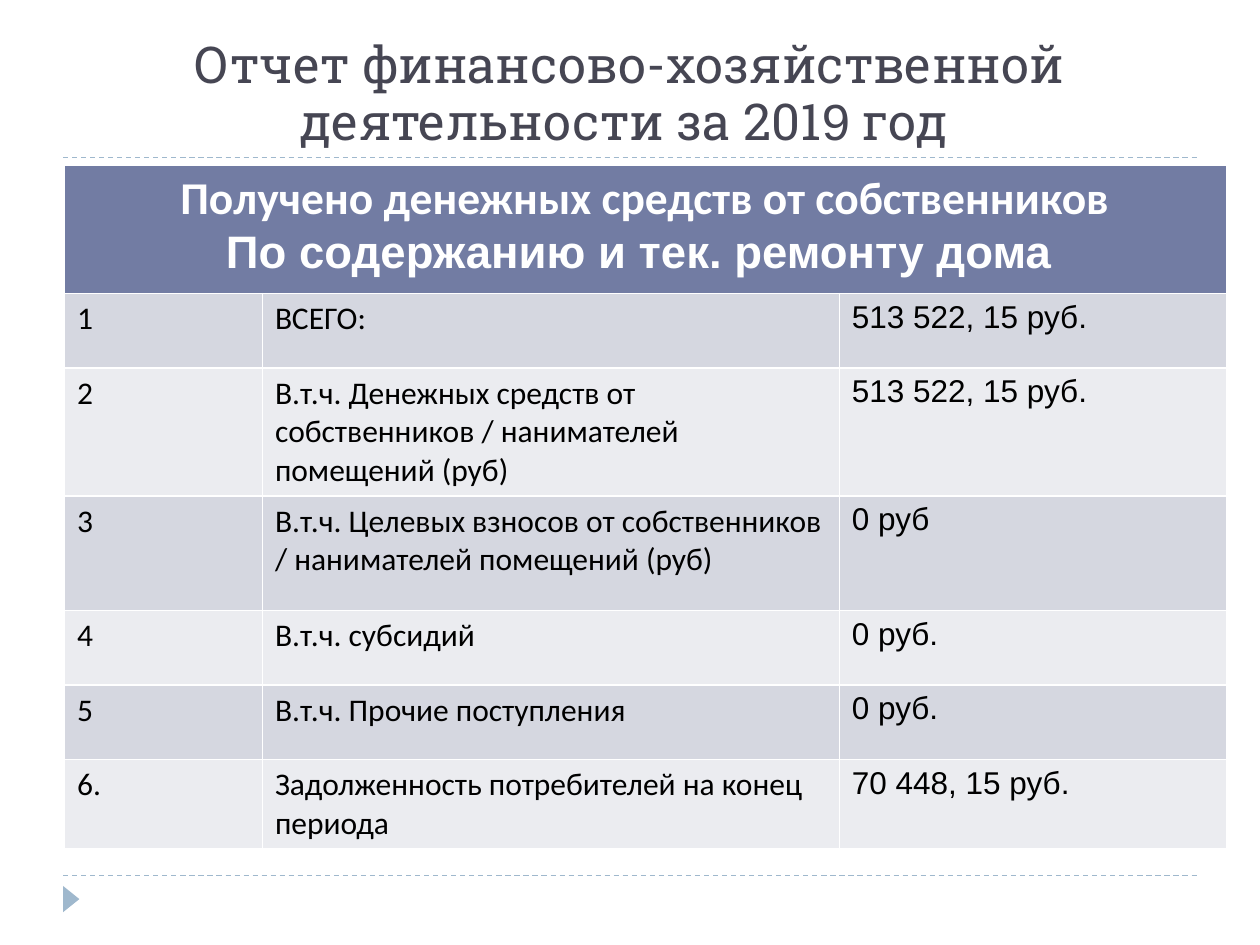
"""Build the 2019 financial report slide with a table of funds received."""
from lxml.etree import SubElement
from pptx import Presentation
from pptx.dml.color import RGBColor
from pptx.enum.dml import MSO_LINE
from pptx.enum.shapes import MSO_CONNECTOR, MSO_SHAPE
from pptx.enum.text import MSO_ANCHOR, MSO_AUTO_SIZE, PP_ALIGN
from pptx.oxml.ns import qn
from pptx.util import Cm, Pt

ACCENT = RGBColor(0x9F, 0xB8, 0xCD)
TITLE = RGBColor(0x46, 0x46, 0x53)
HEADER = RGBColor(0x72, 0x7C, 0xA3)
BANDS = [RGBColor(0xD5, 0xD7, 0xE0), RGBColor(0xEB, 0xEC, 0xF0)]
WHITE = RGBColor(0xFF, 0xFF, 0xFF)
BLACK = RGBColor(0, 0, 0)

HEADINGS = [
    ("Получено денежных средств от собственников", "Calibri"),
    ("По содержанию и тек. ремонту дома ", "Arial"),
]
ROWS = [
    ("1", "ВСЕГО:", "513 522, 15 руб."),
    ("2", "В.т.ч. Денежных средств от собственников / нанимателей помещений (руб)", "513 522, 15 руб."),
    ("3", "В.т.ч. Целевых взносов от собственников / нанимателей помещений (руб)", "0 руб"),
    ("4", "В.т.ч. субсидий", "0 руб."),
    ("5", "В.т.ч. Прочие поступления", "0 руб."),
    ("6.", "Задолженность потребителей на конец периода", "70 448, 15 руб."),
]
COL_WIDTHS = [3.99, 11.63, 7.8]
ROW_HEIGHTS = [2.59, 1.5, 2.31, 2.31, 1.5, 1.5, 1.63]
COL_FONTS = ["Calibri", "Calibri", "Arial"]


def style(font, name, size, color, bold=False):
    font.name, font.size, font.bold = name, Pt(size), bold
    font.color.rgb = color


prs = Presentation()
prs.slide_width, prs.slide_height = Cm(25.4), Cm(19.05)
s = prs.slides.add_slide(prs.slide_layouts[5])

for y in (17.65, 3.18):
    line = s.shapes.add_connector(MSO_CONNECTOR.STRAIGHT, Cm(1.27), Cm(y), Cm(24.13), Cm(y))
    line.line.color.rgb = ACCENT
    line.line.width = Pt(0.75)
    line.line.dash_style = MSO_LINE.DASH
    SubElement(line._element.spPr, qn("a:effectLst"))

sp = s.shapes.add_shape(MSO_SHAPE.ISOSCELES_TRIANGLE, Cm(1.17), Cm(17.96), Cm(0.53), Cm(0.33))
sp.rotation = 90
sp.shadow.inherit = False
sp.fill.solid()
sp.fill.fore_color.rgb = ACCENT
sp.line.fill.background()

title = s.shapes.title
title.left, title.top, title.width, title.height = Cm(1.27), Cm(0.64), Cm(22.86), Cm(2.54)
tf = title.text_frame
tf.auto_size = MSO_AUTO_SIZE.NONE
tf.vertical_anchor = MSO_ANCHOR.BOTTOM
p = tf.paragraphs[0]
p.alignment = PP_ALIGN.CENTER
p.line_spacing = 0.93
for text, name in [
    ("Отчет финансово-хозяйственной деятельности за 201", "Roboto Slab"),
    ("9", "Arial"),
    (" год ", "Roboto Slab"),
]:
    r = p.add_run()
    r.text = text
    style(r.font, name, 29, TITLE)

table = s.shapes.add_table(
    len(ROW_HEIGHTS), len(COL_WIDTHS), Cm(1.3), Cm(3.33), Cm(sum(COL_WIDTHS)), Cm(sum(ROW_HEIGHTS))
).table
for col, width in zip(table.columns, COL_WIDTHS):
    col.width = Cm(width)
for row, height in zip(table.rows, ROW_HEIGHTS):
    row.height = Cm(height)

head = table.cell(0, 0)
head.merge(table.cell(0, len(COL_WIDTHS) - 1))
head.fill.solid()
head.fill.fore_color.rgb = HEADER
head.text = "\n".join(text for text, name in HEADINGS)
for p, (text, name) in zip(head.text_frame.paragraphs, HEADINGS):
    p.alignment = PP_ALIGN.CENTER
    style(p.font, name, 26, WHITE, bold=True)

for i, values in enumerate(ROWS):
    for j, value in enumerate(values):
        cell = table.cell(i + 1, j)
        cell.fill.solid()
        cell.fill.fore_color.rgb = BANDS[i % 2]
        cell.text = value
        style(cell.text_frame.paragraphs[0].font, COL_FONTS[j], 18, BLACK)

prs.save("out.pptx")
